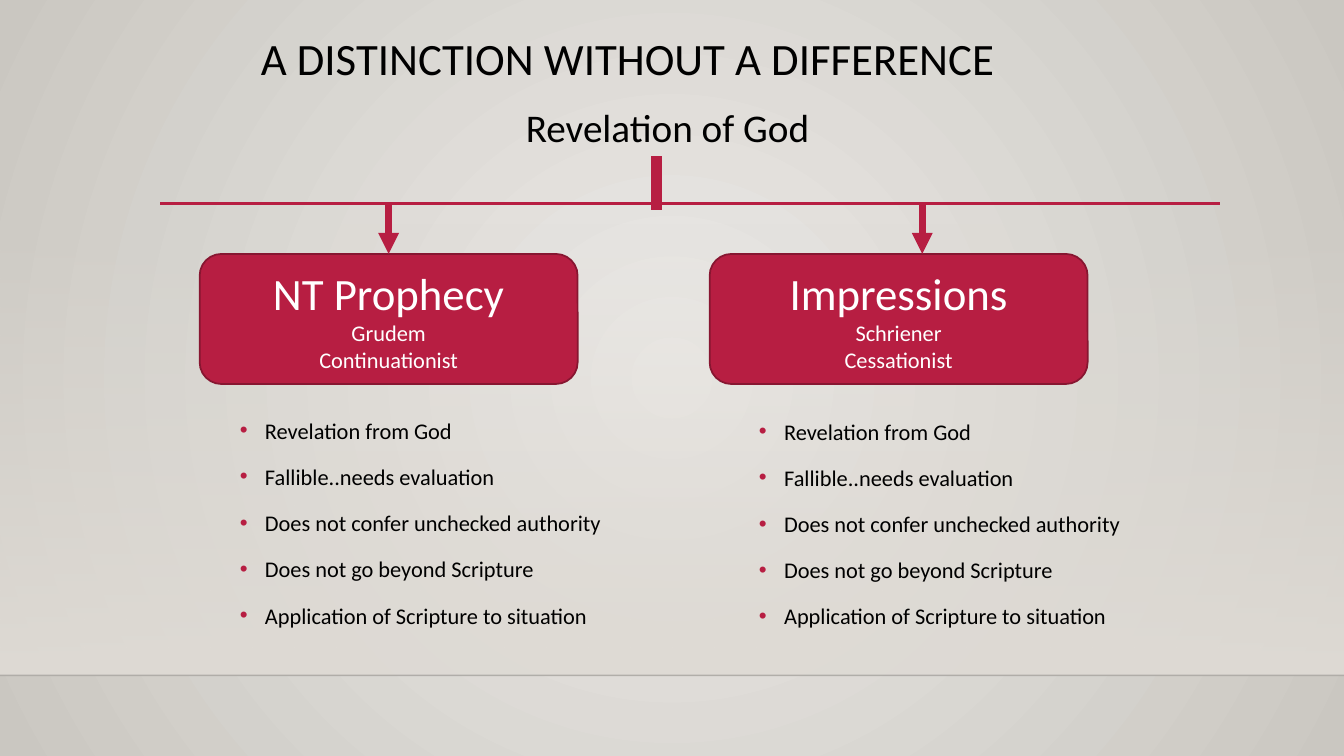
from lxml.etree import SubElement
from pptx import Presentation
from pptx.dml.color import RGBColor
from pptx.enum.shapes import MSO_CONNECTOR, MSO_SHAPE
from pptx.enum.text import MSO_ANCHOR, PP_ALIGN
from pptx.oxml.ns import qn
from pptx.util import Pt

CRIMSON = RGBColor(0xB7, 0x1E, 0x42)
DARK_CRIMSON = RGBColor(0x87, 0x16, 0x31)
BLACK = RGBColor(0, 0, 0)
WHITE = RGBColor(0xFF, 0xFF, 0xFF)
PALE = RGBColor(0xEC, 0xEA, 0xE7)
STONE = RGBColor(0xCA, 0xC7, 0xC1)
SAND = RGBColor(0xDF, 0xDB, 0xD5)

FONT = "Calibri"
WIDTH, HEIGHT = 960, 540
FLOOR_TOP = 482.4
CARD_TOP, CARD_WIDTH, CARD_HEIGHT = 181.4, 270, 92.9
BRANCH_TOP = 144.7

SHARED_TRAITS = [
    "Revelation from God",
    "Fallible..needs evaluation",
    "Does not confer unchecked authority",
    "Does not go beyond Scripture",
    "Application of Scripture to situation",
]


def style_text(paragraph, size, color):
    for span in paragraph.runs:
        span.font.name = FONT
        span.font.size = Pt(size)
        span.font.color.rgb = color


def set_gradient(fill, first, last):
    fill.gradient()
    for stop, color in zip(fill.gradient_stops, (first, last)):
        stop.color.rgb = color


def set_alpha(color_element, percent):
    SubElement(color_element, qn("a:alpha"), val=str(percent * 1000))


def add_background(page):
    fill = page.background.fill
    set_gradient(fill, PALE, STONE)
    # Turn the linear gradient into a circular one from the centre
    gradient = page.background._cSld.find(".//" + qn("a:gradFill"))
    gradient.remove(gradient.find(qn("a:lin")))
    circle = SubElement(gradient, qn("a:path"), path="circle")
    SubElement(circle, qn("a:fillToRect"), l="50000", t="50000", r="50000", b="50000")


def add_wall(page):
    top = 159.1
    wall = page.shapes.add_shape(
        MSO_SHAPE.RECTANGLE, Pt(0), Pt(top), Pt(WIDTH), Pt(FLOOR_TOP - top))
    wall.shadow.inherit = False
    wall.line.fill.background()
    set_gradient(wall.fill, SAND, SAND)
    wall.fill.gradient_angle = 270
    set_alpha(wall._element.spPr.find(".//" + qn("a:srgbClr")), 0)


def add_line(page, start, end, color, width, arrow=False):
    line = page.shapes.add_connector(
        MSO_CONNECTOR.STRAIGHT, *(Pt(value) for value in (*start, *end)))
    line.line.color.rgb = color
    line.line.width = Pt(width)
    if arrow:
        SubElement(line.line._get_or_add_ln(), qn("a:tailEnd"), type="triangle")
    SubElement(line._element.spPr, qn("a:effectLst"))
    return line


def add_label(page, text, left, top, width, height, size, spacing=None, wrap=True):
    box = page.shapes.add_textbox(Pt(left), Pt(top), Pt(width), Pt(height))
    box.text_frame.word_wrap = wrap
    box.text_frame.text = text
    paragraph = box.text_frame.paragraphs[0]
    paragraph.line_spacing = spacing
    style_text(paragraph, size, BLACK)


def add_card(page, left, lines):
    card = page.shapes.add_shape(
        MSO_SHAPE.ROUNDED_RECTANGLE, Pt(left), Pt(CARD_TOP), Pt(CARD_WIDTH), Pt(CARD_HEIGHT))
    card.shadow.inherit = False
    card.fill.solid()
    card.fill.fore_color.rgb = CRIMSON
    card.line.color.rgb = DARK_CRIMSON
    card.line.width = Pt(1.25)
    frame = card.text_frame
    frame.word_wrap = True
    frame.vertical_anchor = MSO_ANCHOR.MIDDLE
    frame.text = "\n".join(lines)
    for index, paragraph in enumerate(frame.paragraphs):
        paragraph.alignment = PP_ALIGN.CENTER
        style_text(paragraph, 16 if index else 32, WHITE)
    return card


def add_bullets(page, left, top, width, items):
    box = page.shapes.add_textbox(Pt(left), Pt(top), Pt(width), Pt(164))
    frame = box.text_frame
    frame.word_wrap = True
    frame.text = "\n".join(items)
    for index, paragraph in enumerate(frame.paragraphs):
        paragraph.line_spacing = 1.2
        paragraph.space_before = Pt(10 if index else 0)
        properties = paragraph._p.get_or_add_pPr()
        properties.set("marL", str(Pt(18)))
        properties.set("indent", str(-Pt(18)))
        bullet_color = SubElement(properties, qn("a:buClr"))
        SubElement(bullet_color, qn("a:srgbClr"), val=str(CRIMSON))
        SubElement(properties, qn("a:buFont"), typeface="Arial")
        SubElement(properties, qn("a:buChar"), char="•")
        style_text(paragraph, 16, BLACK)


def main():
    deck = Presentation()
    deck.slide_width, deck.slide_height = Pt(WIDTH), Pt(HEIGHT)
    page = deck.slides.add_slide(deck.slide_layouts[6])

    # Backdrop with wall and floor edge
    add_background(page)
    add_wall(page)
    floor_edge = add_line(page, (0, FLOOR_TOP), (WIDTH, FLOOR_TOP), BLACK, 1)
    set_alpha(floor_edge._element.spPr.find(".//" + qn("a:srgbClr")), 20)

    # Headings
    add_label(page, "A DISTINCTION WITHOUT A DIFFERENCE", 179.3, 23, 756, 82.8, 32, spacing=0.9)
    add_label(page, "Revelation of God", 368.6, 70.6, 223.2, 41, 28, wrap=False)

    # Trunk and crossbar of the tree
    add_line(page, (114.5, 145.4), (871.2, 145.4), CRIMSON, 2.5)
    add_line(page, (468.7, 111.6), (468.7, 149.8), CRIMSON, 7.75)

    # The two views
    prophecy = add_card(page, 142.6, ["NT Prophecy", "Grudem", "Continuationist"])
    add_card(page, 506.9, ["Impressions", "Schriener", "Cessationist"])

    # Branch arrows; the right one lands off the middle of its card
    branch = add_line(page, (277.6, BRANCH_TOP), (277.6, CARD_TOP), CRIMSON, 5, arrow=True)
    branch.end_connect(prophecy, 0)
    add_line(page, (658.8, BRANCH_TOP), (658.8, CARD_TOP), CRIMSON, 5, arrow=True)

    # Traits that both views share
    add_bullets(page, 164.2, 290.3, 304.6, SHARED_TRAITS)
    add_bullets(page, 535, 291, 282.2, SHARED_TRAITS)

    deck.save("out.pptx")


if __name__ == "__main__":
    main()
